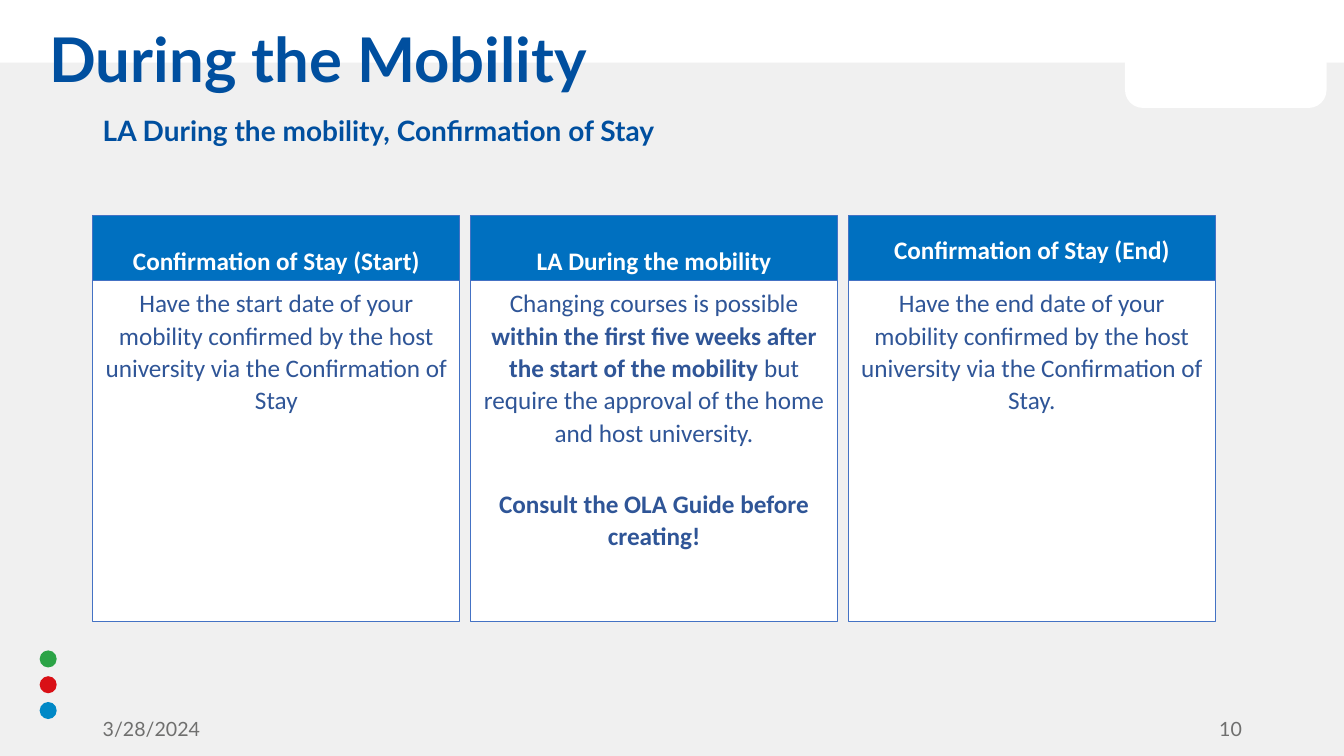
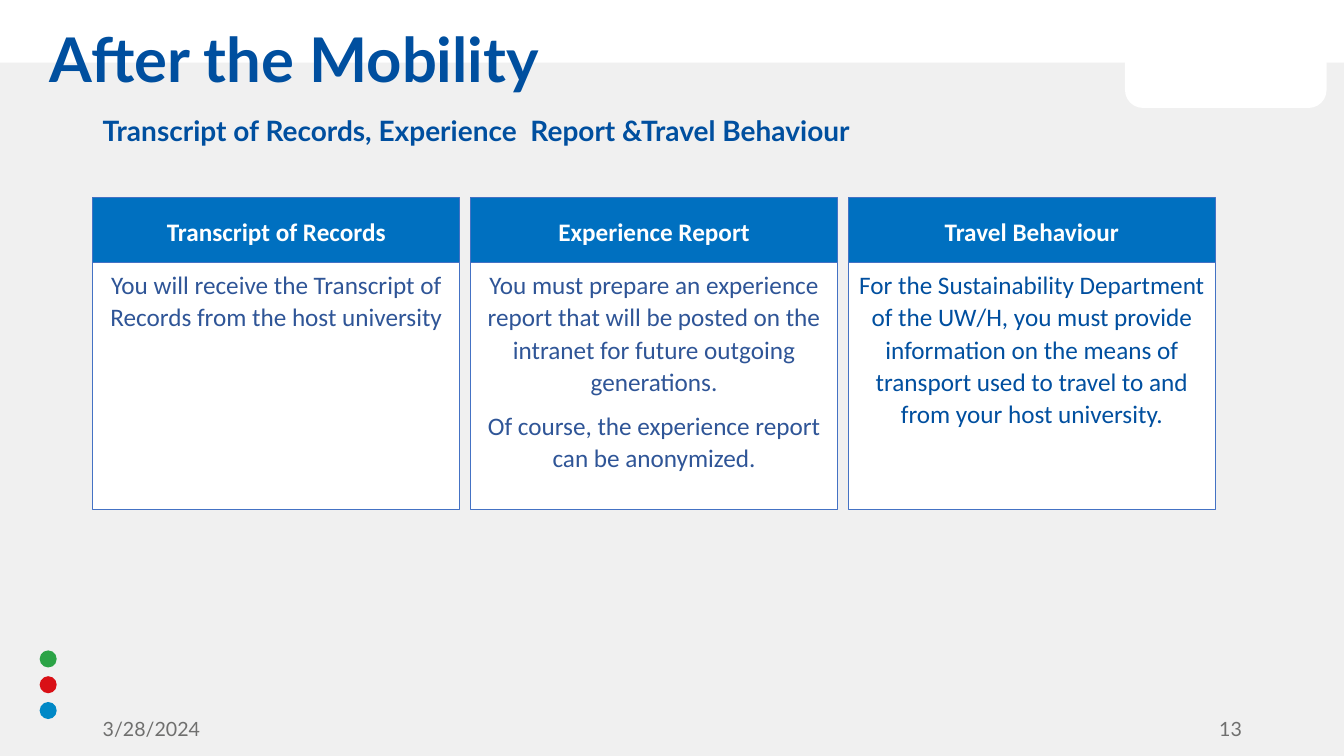
from dataclasses import dataclass

from pptx import Presentation
from pptx.dml.color import RGBColor
from pptx.enum.shapes import MSO_SHAPE
from pptx.enum.text import MSO_ANCHOR, PP_ALIGN
from pptx.util import Cm, Pt

RECT = MSO_SHAPE.RECTANGLE
OVAL = MSO_SHAPE.OVAL
TAB = MSO_SHAPE.ROUND_2_SAME_RECTANGLE
TOP = MSO_ANCHOR.TOP
MIDDLE = MSO_ANCHOR.MIDDLE
BOTTOM = MSO_ANCHOR.BOTTOM
LEFT = PP_ALIGN.LEFT
CENTER = PP_ALIGN.CENTER
RIGHT = PP_ALIGN.RIGHT

WHITE, PALE, GREY = "FFFFFF", "F0F0F0", "6F6F6E"
NAVY, BLUE, EDGE, INK = "004F9F", "0070C0", "4472C4", "2F5597"
DOTS = ("2BA346", "D91016", "0088C6")

WIDE, HIGH = 33.87, 19.05
MARGIN = 2.34
CARD_W, CARD_STEP, HEAD_H = 9.25, 9.52, 1.63


@dataclass(frozen=True)
class Run:
    text: str
    bold: bool = False


@dataclass(frozen=True)
class Para:
    runs: tuple[Run, ...]
    before: float = 0


@dataclass(frozen=True)
class Style:
    font: str
    size: float
    color: str
    align: PP_ALIGN = LEFT
    lines: float = 1.0
    after: float = 0


@dataclass(frozen=True)
class Card:
    head: str
    body: tuple[Para, ...]
    anchor: MSO_ANCHOR = MIDDLE
    color: str = INK


@dataclass(frozen=True)
class Page:
    title: str
    topic: str
    number: str
    top: float
    height: float
    cards: tuple[Card, ...]


TITLE = Style("Lato", 44, NAVY, lines=0.9)
TOPIC = Style("Lato", 20, NAVY, lines=0.9)
DATE = Style("Lato", 14, GREY)
NUMBER = Style("Lato", 14, GREY, RIGHT)
HEAD = Style("Calibri", 18, WHITE, CENTER, 1.07, 8)


def plain(text: str, bold: bool = False) -> Para:
    return Para((Run(text, bold),))


PAGES = (
    Page("During the Mobility", "LA During the mobility, Confirmation of Stay",
         "10", 5.44, 8.59, (
             Card("Confirmation of Stay (Start)", (
                 plain("Have the start date of your mobility confirmed by the "
                       "host university via the Confirmation of Stay"),
             ), BOTTOM),
             Card("LA During the mobility", (
                 Para((
                     Run("Changing courses is possible "),
                     Run("within the first five weeks after the start of the "
                         "mobility", True),
                     Run(" but require the approval of the home and host "
                         "university."),
                 )),
                 Para((Run("Consult the OLA Guide before creating!", True),), 19.6),
             ), BOTTOM),
             Card("Confirmation of Stay (End)", (
                 plain("Have the end date of your mobility confirmed by the "
                       "host university via the Confirmation of Stay."),
             )),
         )),
    Page("After the Mobility",
         "Transcript of Records, Experience  Report &Travel Behaviour",
         "13", 4.98, 6.22, (
             Card("Transcript of Records", (
                 plain("You will receive the Transcript of Records from the "
                       "host university"),
             )),
             Card("Experience Report", (
                 plain("You must prepare an experience report that will be "
                       "posted on the intranet for future outgoing "
                       "generations."),
                 plain("Of course, the experience report can be anonymized."),
             )),
             Card("Travel Behaviour", (
                 plain("For the Sustainability Department of the UW/H, you "
                       "must provide information on the means of transport "
                       "used to travel to and from your host university."),
             ), color=NAVY),
         )),
)


def color(code: str) -> RGBColor:
    return RGBColor.from_string(code)


def write(frame, paras: tuple[Para, ...], style: Style, anchor=TOP) -> None:
    frame.word_wrap = True
    frame.vertical_anchor = anchor
    for index, para in enumerate(paras):
        line = frame.add_paragraph() if index else frame.paragraphs[0]
        line.alignment = style.align
        line.line_spacing = style.lines
        line.space_before = Pt(para.before)
        line.space_after = Pt(style.after)
        for part in para.runs:
            run = line.add_run()
            run.text = part.text
            run.font.name = style.font
            run.font.size = Pt(style.size)
            run.font.bold = part.bold
            run.font.color.rgb = color(style.color)


def shape(slide, kind, x: float, y: float, w: float, h: float,
          fill: str, edge: str = ""):
    item = slide.shapes.add_shape(kind, Cm(x), Cm(y), Cm(w), Cm(h))
    item.shadow.inherit = False
    item.fill.solid()
    item.fill.fore_color.rgb = color(fill)
    if edge:
        item.line.color.rgb = color(edge)
        item.line.width = Pt(0.5)
    else:
        item.line.fill.background()
    return item


def label(slide, x: float, y: float, w: float, h: float,
          para: Para, style: Style, anchor=TOP) -> None:
    box = slide.shapes.add_textbox(Cm(x), Cm(y), Cm(w), Cm(h))
    write(box.text_frame, (para,), style, anchor)


def frame(slide, number: str) -> None:
    """Draw the ground, dots, top tab and footer that all slides share."""
    shape(slide, RECT, 0, 1.58, WIDE, HIGH - 1.58, PALE)
    for index, dot in enumerate(DOTS):
        shape(slide, OVAL, 1, 16.39 + 0.65 * index, 0.43, 0.43, dot)
    shape(slide, TAB, 28.35, 0, 5.08, 2.72, WHITE).rotation = 180
    label(slide, MARGIN, 17.96, 7.62, 0.79, plain("3/28/2024"), DATE, MIDDLE)
    label(slide, 23.93, 17.96, 7.62, 0.79, plain(number), NUMBER, MIDDLE)


def draw(slide, page: Page) -> None:
    frame(slide, page.number)
    for index, card in enumerate(page.cards):
        x = MARGIN + CARD_STEP * index
        head = shape(slide, RECT, x, page.top, CARD_W, HEAD_H, BLUE, EDGE)
        write(head.text_frame, (plain(card.head, True),), HEAD, card.anchor)
        body = shape(slide, RECT, x, page.top + HEAD_H, CARD_W, page.height,
                     WHITE, EDGE)
        style = Style("Calibri", 18, card.color, CENTER, 1.07, 8)
        write(body.text_frame, card.body, style)
    label(slide, 1, 0.61, 27.35, 1.96, plain(page.title, True), TITLE)
    label(slide, MARGIN, 2.82, 26.03, 0.99, plain(page.topic, True), TOPIC)


def main() -> None:
    deck = Presentation()
    deck.slide_width = Cm(WIDE)
    deck.slide_height = Cm(HIGH)
    blank = deck.slide_layouts[6]
    for page in PAGES:
        draw(deck.slides.add_slide(blank), page)
    deck.save("out.pptx")


if __name__ == "__main__":
    main()
